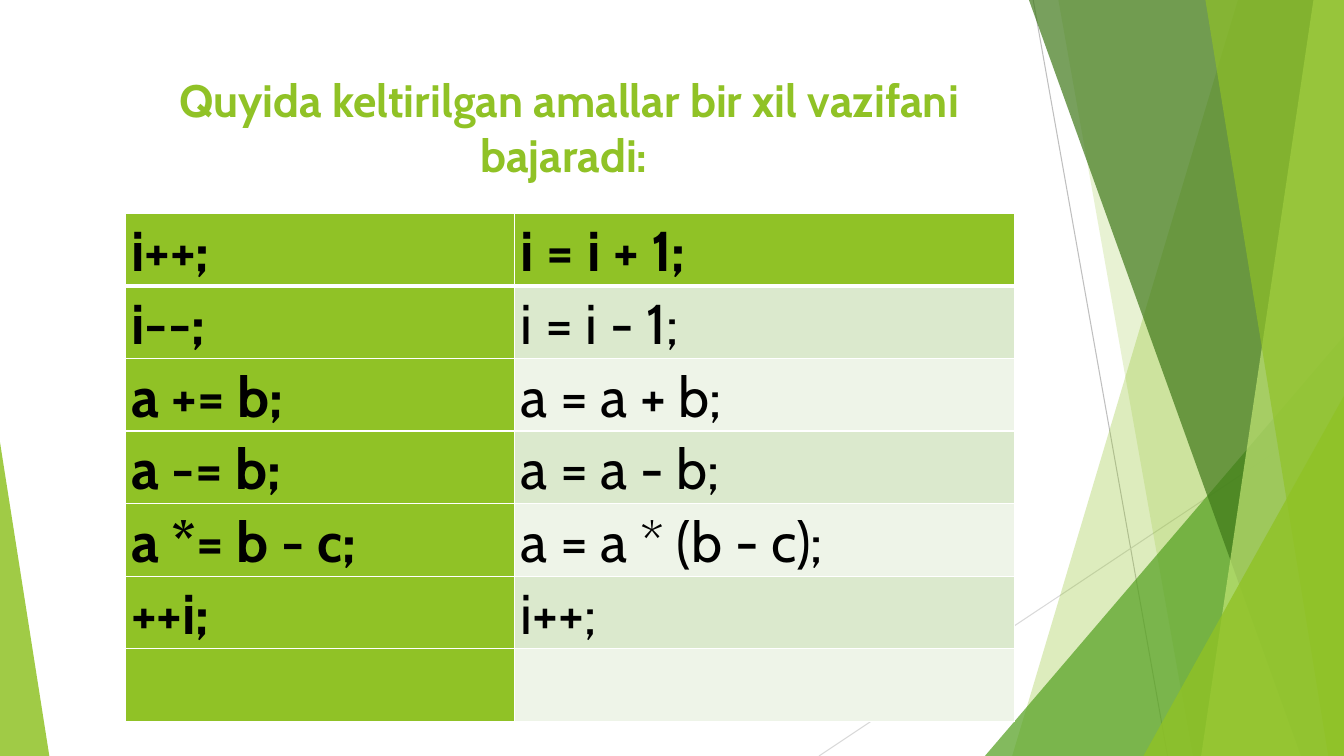
from lxml import etree
from pptx import Presentation
from pptx.dml.color import RGBColor
from pptx.enum.shapes import MSO_CONNECTOR, MSO_SHAPE
from pptx.enum.text import MSO_ANCHOR, MSO_AUTO_SIZE, PP_ALIGN
from pptx.oxml.ns import qn
from pptx.util import Pt

EMU_PER_PX = 9525
SLIDE_WIDTH, SLIDE_HEIGHT = 1280, 720
TITLE_ONLY = 5
STRAIGHT = MSO_CONNECTOR.STRAIGHT
TRIANGLE = MSO_SHAPE.ISOSCELES_TRIANGLE
TOP = MSO_ANCHOR.TOP
CENTER = PP_ALIGN.CENTER
NO_AUTOFIT = MSO_AUTO_SIZE.NONE

FONT = "Cabin"
BLACK = RGBColor(0x00, 0x00, 0x00)
WHITE = RGBColor(0xFF, 0xFF, 0xFF)
GRAY = RGBColor(0xBF, 0xBF, 0xBF)
LIGHT_GRAY = RGBColor(0xD9, 0xD9, 0xD9)
LIME = RGBColor(0x90, 0xC2, 0x26)
GREEN = RGBColor(0x54, 0xA0, 0x21)
DARK_GREEN = RGBColor(0x3F, 0x78, 0x19)
PALE_LIME = RGBColor(0xC0, 0xE4, 0x74)
BAND_DARK = RGBColor(0xDB, 0xE9, 0xCD)
BAND_LIGHT = RGBColor(0xEE, 0xF4, 0xE8)

TITLE = "Quyida keltirilgan amallar bir xil vazifani bajaradi: "
OPERATIONS = [
    ("i++;", "i = i + 1;"),
    ("i--;", "i = i - 1;"),
    ("a += b;", "a = a + b;"),
    ("a -= b;", "a = a - b;"),
    ("a *= b - c;", "a = a * (b - c);"),
    ("++i;", "i++;"),
    ("", ""),
]


def px(*lengths):
    return [length * EMU_PER_PX for length in lengths]


class SlideBuilder:
    def __init__(self, presentation):
        self.slide = presentation.slides.add_slide(presentation.slide_layouts[TITLE_ONLY])
        self.shapes = self.slide.shapes

    def style_text(self, paragraph, size, color, bold):
        for run in paragraph.runs:
            run.font.name = FONT
            run.font.size = Pt(size)
            run.font.bold = bold
            run.font.color.rgb = color

    def title(self, text, left, top, width, height):
        shape = self.shapes.title
        shape.left, shape.top, shape.width, shape.height = px(left, top, width, height)
        frame = shape.text_frame
        frame.text = text
        frame.word_wrap = True
        frame.auto_size = NO_AUTOFIT
        frame.vertical_anchor = TOP
        frame.paragraphs[0].alignment = CENTER
        self.style_text(frame.paragraphs[0], 32.4, LIME, True)

    def line(self, start, end, color):
        connector = self.shapes.add_connector(STRAIGHT, *px(*start, *end))
        connector.line.color.rgb = color
        connector.line.width = Pt(0.75)
        etree.SubElement(connector._element.spPr, qn("a:effectLst"))

    def paint(self, shape, color, opacity):
        shape.shadow.inherit = False
        shape.line.fill.background()
        shape.fill.solid()
        shape.fill.fore_color.rgb = color
        color_element = shape._element.spPr.find(".//" + qn("a:srgbClr"))
        etree.SubElement(color_element, qn("a:alpha"), val=str(opacity * 1000))

    def ribbon(self, top_x, bottom_x, color, opacity):
        """Fill from a slanted edge to the right side of the slide."""
        builder = self.shapes.build_freeform(top_x, 0, scale=EMU_PER_PX)
        builder.add_line_segments([
            (SLIDE_WIDTH, 0), (SLIDE_WIDTH, SLIDE_HEIGHT), (bottom_x, SLIDE_HEIGHT)])
        self.paint(builder.convert_to_shape(), color, opacity)

    def corner_triangle(self, left, top, width, apex, color, opacity):
        """Stand a triangle on the bottom edge of the slide."""
        shape = self.shapes.add_shape(TRIANGLE, *px(left, top, width, SLIDE_HEIGHT - top))
        shape.adjustments[0] = apex
        self.paint(shape, color, opacity)

    def cell_borders(self, cell, bottom_width):
        properties = cell._tc.get_or_add_tcPr()
        widths = {"a:lnL": 1, "a:lnR": 1, "a:lnT": 1, "a:lnB": bottom_width}
        for tag, width in widths.items():
            border = etree.SubElement(properties, qn(tag), w=str(Pt(width)))
            fill = etree.SubElement(border, qn("a:solidFill"))
            etree.SubElement(fill, qn("a:srgbClr"), val=str(WHITE))

    def table(self, rows, left, top, column_widths, row_height):
        size = px(left, top, sum(column_widths), row_height * len(rows))
        table = self.shapes.add_table(len(rows), len(column_widths), *size).table
        for column, width in zip(table.columns, px(*column_widths)):
            column.width = width
        for row_index, texts in enumerate(rows):
            table.rows[row_index].height = row_height * EMU_PER_PX
            for column_index, text in enumerate(texts):
                emphasized = row_index == 0 or column_index == 0
                band = BAND_DARK if row_index % 2 else BAND_LIGHT
                cell = table.cell(row_index, column_index)
                cell.margin_left, cell.margin_right = px(6, 7)
                cell.margin_top = cell.margin_bottom = 0
                self.cell_borders(cell, 3 if row_index == 0 else 1)
                cell.fill.solid()
                cell.fill.fore_color.rgb = LIME if emphasized else band
                paragraph = cell.text_frame.paragraphs[0]
                paragraph.text = text
                paragraph.line_spacing = 1.07
                self.style_text(paragraph, 40, BLACK, emphasized)


def main():
    presentation = Presentation()
    presentation.slide_width, presentation.slide_height = px(SLIDE_WIDTH, SLIDE_HEIGHT)
    builder = SlideBuilder(presentation)

    builder.line((984, 0), (1112, SLIDE_HEIGHT), GRAY)
    builder.line((SLIDE_WIDTH, 387), (780, SLIDE_HEIGHT), LIGHT_GRAY)
    builder.ribbon(1179, 964, LIME, 30)
    builder.ribbon(1008, 1136, LIME, 20)
    builder.corner_triangle(938, 320, 342, 1, GREEN, 72)
    builder.ribbon(980, 1239, DARK_GREEN, 70)
    builder.ribbon(1251, 1144, PALE_LIME, 70)
    builder.ribbon(1148, 1265, LIME, 65)
    builder.corner_triangle(1089, 377, 191, 1, LIME, 80)
    builder.corner_triangle(0, 421, 47, 0, LIME, 85)

    builder.title(TITLE, 91, 64, 902, 138)
    builder.table(OPERATIONS, 119, 203, (371, 476), 69)
    presentation.save("out.pptx")


if __name__ == "__main__":
    main()
